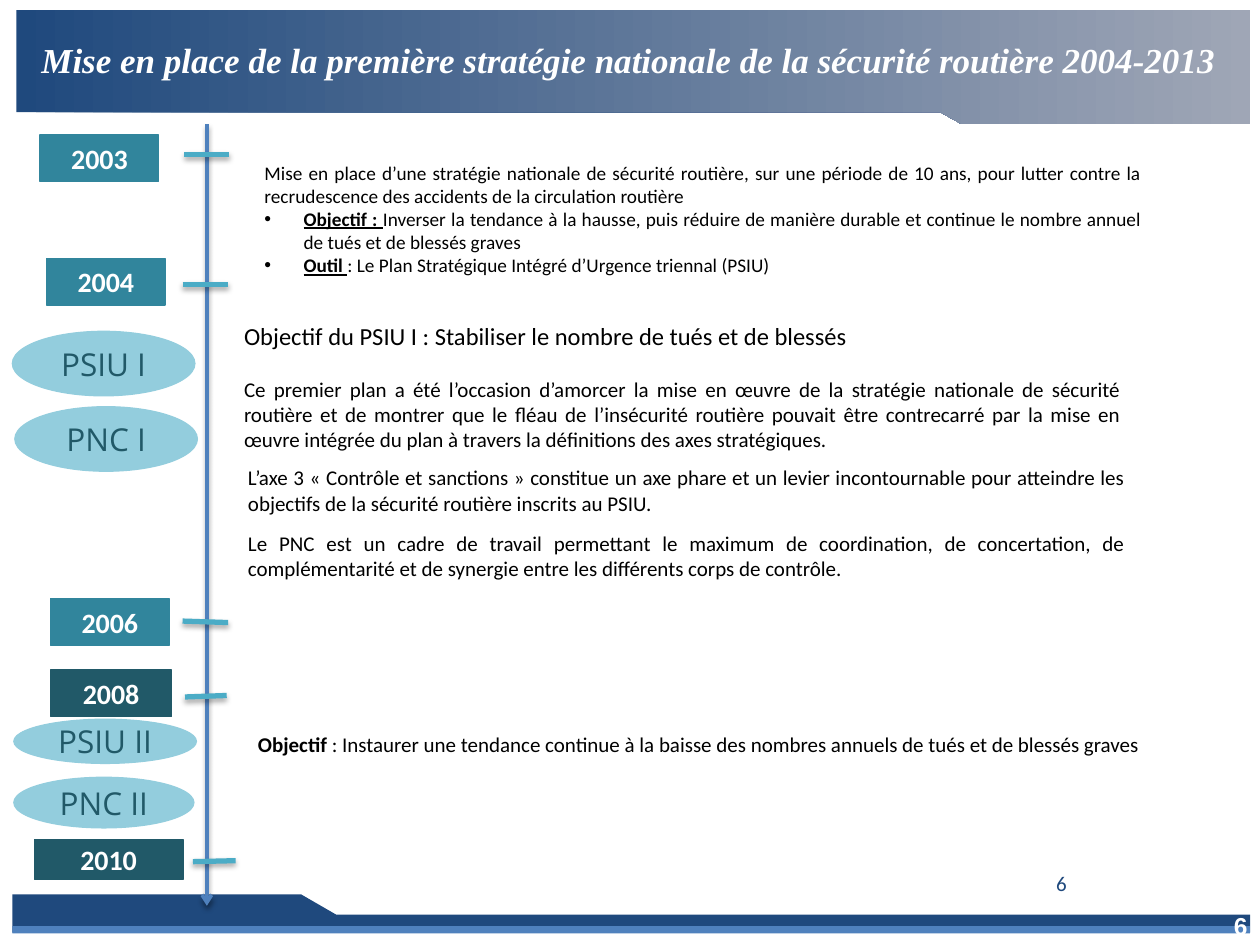
from dataclasses import dataclass

from lxml import etree
from pptx import Presentation
from pptx.dml.color import RGBColor
from pptx.enum.shapes import MSO_CONNECTOR, MSO_SHAPE
from pptx.enum.text import MSO_ANCHOR, MSO_AUTO_SIZE, PP_ALIGN
from pptx.oxml import parse_xml
from pptx.oxml.ns import nsdecls, qn
from pptx.util import Cm, Pt

LEFT, MID, RIGHT, JUST = PP_ALIGN.LEFT, PP_ALIGN.CENTER, PP_ALIGN.RIGHT, PP_ALIGN.JUSTIFY
RECT, OVAL = MSO_SHAPE.RECTANGLE, MSO_SHAPE.OVAL
NAVY, BLUE, CYAN, SKY = "1F497D", "4F81BD", "4BACC6", "93CDDD"
TEAL, DARK, WHITE, BLACK = "31859C", "215968", "FFFFFF", "000000"


@dataclass
class Run:
    text: str
    size: float
    color: str = BLACK
    font: str = "Calibri"
    bold: bool = False
    under: bool = False
    slant: bool = False


@dataclass
class Para:
    runs: list[Run]
    align: int = JUST
    before: float = 0
    bullet: bool = False


@dataclass
class Block:
    box: tuple
    paras: list[Para]


@dataclass
class Year:
    name: str
    box: tuple
    color: str
    tick: tuple


@dataclass
class Plan:
    name: str
    box: tuple


def tint(code: str) -> RGBColor:
    return RGBColor.from_string(code)


def span(box: tuple) -> list:
    return [Cm(v) for v in box]


def write(frame, paras: list[Para]) -> None:
    for i, para in enumerate(paras):
        p = frame.paragraphs[0] if i == 0 else frame.add_paragraph()
        p.alignment = para.align
        p.space_before = Pt(para.before)
        if para.bullet:
            props = p._p.get_or_add_pPr()
            props.set("marL", str(Cm(0.79)))
            props.set("indent", str(Cm(-0.79)))
            etree.SubElement(props, qn("a:buFont")).set("typeface", "Arial")
            etree.SubElement(props, qn("a:buChar")).set("char", "•")
        for part in para.runs:
            r = p.add_run()
            r.text = part.text
            font = r.font
            font.name, font.size = part.font, Pt(part.size)
            font.bold, font.italic, font.underline = part.bold, part.slant, part.under
            font.color.rgb = tint(part.color)


def add_text(slide, block: Block) -> None:
    frame = slide.shapes.add_textbox(*span(block.box)).text_frame
    frame.word_wrap = True
    write(frame, block.paras)


def add_form(slide, kind: int, box: tuple, color: str, label: Run | None = None) -> None:
    form = slide.shapes.add_shape(kind, *span(box))
    form.shadow.inherit = False
    form.fill.solid()
    form.fill.fore_color.rgb = tint(color)
    if label is None:
        form.line.fill.background()
        return
    form.line.color.rgb = tint(color)
    form.line.width = Pt(0.75)
    frame = form.text_frame
    frame.word_wrap = False
    frame.vertical_anchor = MSO_ANCHOR.MIDDLE
    frame.margin_top = frame.margin_bottom = 0
    write(frame, [Para([label], MID)])


def add_band(slide, points: list[tuple]):
    first, *rest = [tuple(span(p)) for p in points]
    pen = slide.shapes.build_freeform(*first)
    pen.add_line_segments(rest, close=True)
    band = pen.convert_to_shape()
    band.shadow.inherit = False
    band.line.fill.background()
    return band


def add_line(slide, ends: tuple, color: str, width: float, alpha: int, arrow: bool = False) -> None:
    line = slide.shapes.add_connector(MSO_CONNECTOR.STRAIGHT, *span(ends))
    line.line.color.rgb = tint(color)
    line.line.width = Pt(width)
    if arrow:
        etree.SubElement(line.line._get_or_add_ln(), qn("a:tailEnd")).set("type", "arrow")
    line._element.spPr.append(parse_xml(
        f'<a:effectLst {nsdecls("a")}><a:outerShdw blurRad="{Pt(3.1)}" dist="{Pt(1.8)}" '
        f'dir="5400000" rotWithShape="0"><a:srgbClr val="{BLACK}">'
        f'<a:alpha val="{alpha * 1000}"/></a:srgbClr></a:outerShdw></a:effectLst>'))


YEARS = [
    Year("2003", (0.81, 2.72, 2.39, 0.94), TEAL, (3.71, 3.12, 4.62, 3.12)),
    Year("2004", (0.94, 5.21, 2.39, 0.94), TEAL, (3.68, 5.74, 4.6, 5.74)),
    Year("2006", (1.02, 12.07, 2.39, 0.94), TEAL, (3.68, 12.52, 4.6, 12.55)),
    Year("2008", (1.02, 13.51, 2.44, 0.94), DARK, (3.73, 14.05, 4.57, 14.02)),
    Year("2010", (0.69, 16.92, 3, 0.81), DARK, (3.89, 17.37, 4.75, 17.35)),
]
PLANS = [
    Plan("PSIU I", (0.25, 6.68, 3.68, 1.3)),
    Plan("PNC I", (0.3, 8.2, 3.68, 1.3)),
    Plan("PSIU II", (0.28, 14.5, 3.68, 0.89)),
    Plan("PNC II", (0.28, 15.67, 3.63, 1.02)),
]
BLOCKS = [
    Block((24.61, 18.24, 0.79, 0.81), [Para([Run("6", 14, WHITE, "Arial", True)], RIGHT)]),
    Block((18.54, 17.42, 5.72, 0.97), [Para([Run("6", 12, NAVY)], MID)]),
    Block((5.08, 3.12, 18.19, 2.62), [
        Para([Run("Mise en place d’une stratégie nationale de sécurité routière, sur une période de 10 ans, "
                  "pour lutter contre la recrudescence des accidents de la circulation routière", 11)]),
        Para([Run("Objectif : ", 11, bold=True, under=True),
              Run("Inverser la tendance à la hausse, puis réduire de manière durable et continue "
                  "le nombre annuel de tués et de blessés graves", 11)], bullet=True),
        Para([Run("Outil ", 11, bold=True, under=True),
              Run(": Le Plan Stratégique Intégré d’Urgence triennal (PSIU)", 11)], bullet=True),
    ]),
    Block((4.67, 6.35, 18.19, 2.9), [
        Para([Run("Objectif du PSIU I : Stabiliser le nombre de tués et de blessés", 14)]),
        Para([Run("Ce premier plan a été l’occasion d’amorcer la mise en œuvre de la stratégie nationale "
                  "de sécurité routière et de montrer que le fléau de l’insécurité routière pouvait être "
                  "contrecarré par la mise en œuvre intégrée du plan à travers la définitions des axes "
                  "stratégiques.", 12)], before=14.6),
    ]),
    Block((4.75, 9.25, 18.19, 2.69), [
        Para([Run("L’axe 3 « Contrôle et sanctions » constitue un axe phare et un levier incontournable "
                  "pour atteindre les objectifs de la sécurité routière inscrits au PSIU.", 12)]),
        Para([Run("Le PNC est un cadre de travail permettant le maximum de coordination, de concertation, "
                  "de complémentarité et de synergie entre les différents corps de contrôle.", 12)],
             before=8.5),
    ]),
    Block((4.95, 14.63, 19.51, 1.27), [
        Para([Run("Objectif", 12, bold=True),
              Run(" : Instaurer une tendance continue à la baisse des nombres annuels de tués "
                  "et de blessés graves", 12)], LEFT),
    ]),
]
FOOT = [(0.25, 18.8), (25.2, 18.8), (25.2, 18.44), (6.78, 18.44), (6.07, 18.03), (0.25, 18.03)]
HEAD = [(25.2, 0.2), (0.33, 0.2), (0.33, 2.26), (18.95, 2.26), (19.4, 2.51), (25.2, 2.51)]


def main() -> None:
    deck = Presentation()
    deck.slide_width, deck.slide_height = Cm(25.4), Cm(19.05)
    slide = deck.slides.add_slide(deck.slide_layouts[5])

    foot = add_band(slide, FOOT)
    foot.fill.solid()
    foot.fill.fore_color.rgb = tint(NAVY)
    head = add_band(slide, HEAD)
    head.fill.gradient()
    head.fill.gradient_angle = 0
    for stop, code, place in zip(head.fill.gradient_stops, (NAVY, "9FA6B6"), (0, 1)):
        stop.color.rgb = tint(code)
        stop.position = place
    add_form(slide, RECT, (0.25, 18.67, 24.95, 0.15), BLUE)

    title = slide.shapes.title
    title.left, title.top, title.width, title.height = span((0.58, 0, 24.82, 2.41))
    frame = title.text_frame
    frame.auto_size = MSO_AUTO_SIZE.NONE
    frame.vertical_anchor = MSO_ANCHOR.MIDDLE
    write(frame, [Para([Run("Mise en place de la première stratégie nationale de la sécurité routière 2004-2013",
                            20, WHITE, "Times New Roman", bold=True, slant=True)], LEFT)])
    slide.shapes._spTree.append(title._element)

    add_line(slide, (4.17, 2.51, 4.17, 18.26), BLUE, 2, 38, arrow=True)
    for year in YEARS:
        add_line(slide, year.tick, CYAN, 3, 35)
        add_form(slide, RECT, year.box, year.color, Run(year.name, 16, WHITE, bold=True))
    for plan in PLANS:
        add_form(slide, OVAL, plan.box, SKY, Run(plan.name, 18, DARK, "Open Sans"))
    for block in BLOCKS:
        add_text(slide, block)
    deck.save("out.pptx")


if __name__ == "__main__":
    main()
